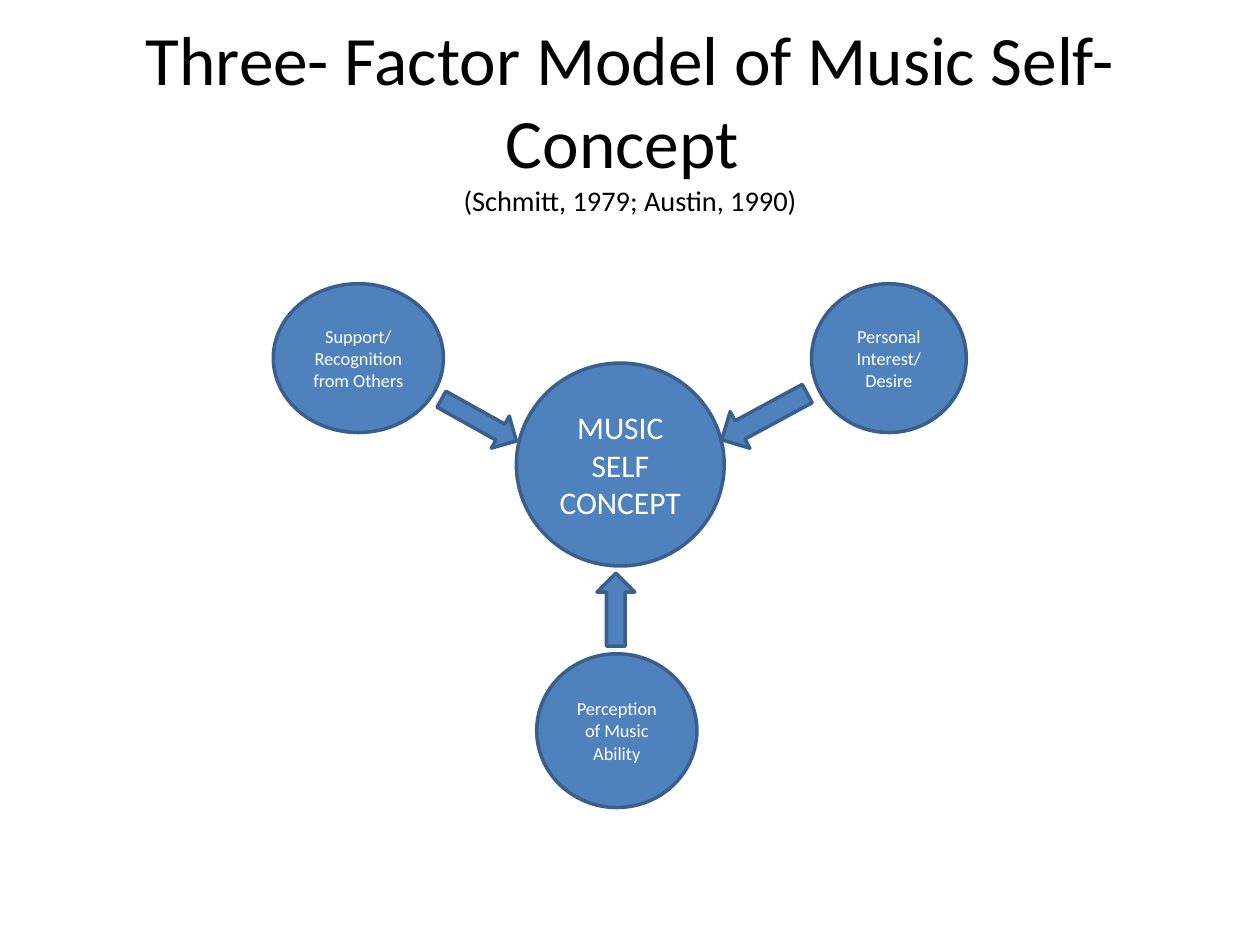
from pptx import Presentation
from pptx.dml.color import RGBColor
from pptx.enum.shapes import MSO_SHAPE
from pptx.enum.text import MSO_ANCHOR, MSO_AUTO_SIZE, PP_ALIGN
from pptx.util import Cm, Pt

TITLE = [("Three- Factor Model of Music Self-Concept \v", 39.6),
         ("(Schmitt, 1979; Austin, 1990)", 16.2)]
TITLE_BOX = (1.27, 0.76, 22.86, 3.18)

# text, size in points, box (left, top, width, height) in cm
CIRCLES = [
    ("MUSIC SELF CONCEPT", 18, (10.41, 7.32, 4.19, 4.09)),
    ("Support/ Recognition from Others", 10.5, (5.51, 5.72, 3.43, 3)),
    ("Personal Interest/ Desire", 10.5, (16.36, 5.72, 3.12, 3)),
    ("Perception of Music Ability", 10.5, (10.82, 13.18, 3.23, 3.1)),
]
# box in cm, rotation in degrees
ARROWS = [
    ((8.79, 8.1, 1.73, 0.74), 29.2),
    ((14.43, 7.98, 1.96, 0.84), 151.6),
    ((11.68, 11.91, 1.47, 0.76), 270),
]
FILL, EDGE, WHITE, BLACK = "4F81BD", "3A5F8C", "FFFFFF", "000000"


def paint(target, color):
    """Give a fill a solid colour, or set the colour of a font."""
    if hasattr(target, "solid"):
        target.solid()
        target.fore_color.rgb = RGBColor.from_string(color)
    else:
        target.color.rgb = RGBColor.from_string(color)


def write(shape, runs, color=WHITE, font="Calibri"):
    """Put (text, size) runs in one centred paragraph."""
    frame = shape.text_frame
    frame.word_wrap = True
    frame.auto_size = MSO_AUTO_SIZE.NONE
    frame.vertical_anchor = MSO_ANCHOR.MIDDLE
    para = frame.paragraphs[0]
    para.alignment = PP_ALIGN.CENTER
    for text, size in runs:
        body, brk, _ = text.partition("\v")
        run = para.add_run()
        run.text = body
        run.font.name = font
        run.font.size = Pt(size)
        paint(run.font, color)
        if brk:
            para.add_line_break()


def draw(slide, kind, box, turn=0):
    shape = slide.shapes.add_shape(kind, *map(Cm, box))
    shape.rotation = turn
    shape.shadow.inherit = False
    paint(shape.fill, FILL)
    paint(shape.line.fill, EDGE)
    shape.line.width = Pt(2)
    return shape


def main():
    deck = Presentation()
    deck.slide_width, deck.slide_height = Cm(25.4), Cm(19.05)
    slide = deck.slides.add_slide(deck.slide_layouts[5])
    title = slide.shapes.title
    title.left, title.top, title.width, title.height = map(Cm, TITLE_BOX)
    write(title, TITLE, color=BLACK)
    for text, size, box in CIRCLES:
        write(draw(slide, MSO_SHAPE.OVAL, box), [(text, size)])
    for box, turn in ARROWS:
        draw(slide, MSO_SHAPE.RIGHT_ARROW, box, turn)
    deck.save("out.pptx")


if __name__ == "__main__":
    main()
